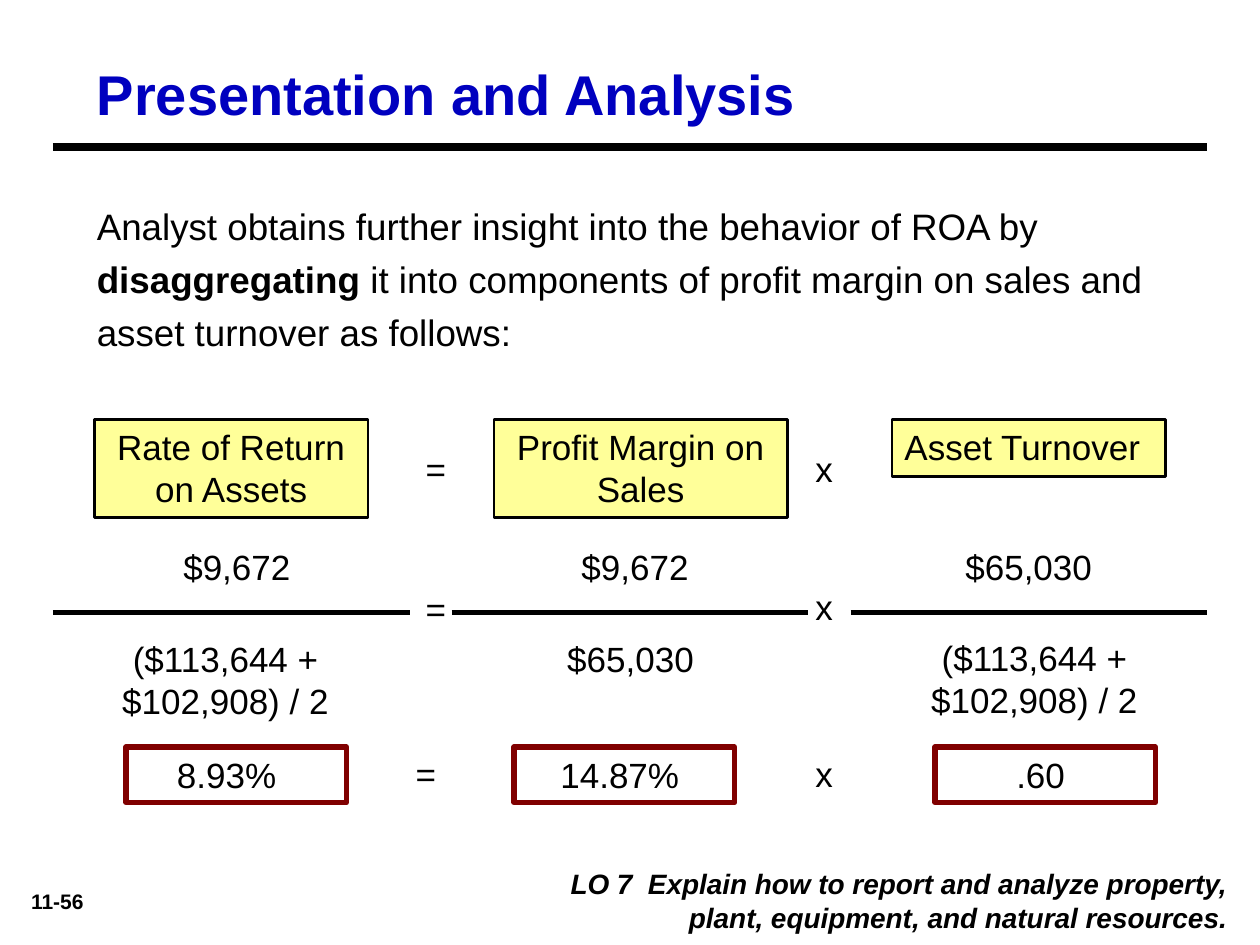
from lxml import etree
from pptx import Presentation
from pptx.dml.color import RGBColor
from pptx.enum.shapes import MSO_CONNECTOR, MSO_SHAPE
from pptx.enum.text import MSO_ANCHOR, PP_ALIGN
from pptx.oxml.ns import qn
from pptx.util import Inches, Pt

LEFT, CENTER, RIGHT = PP_ALIGN.LEFT, PP_ALIGN.CENTER, PP_ALIGN.RIGHT
TOP = MSO_ANCHOR.TOP
RECTANGLE = MSO_SHAPE.RECTANGLE
STRAIGHT = MSO_CONNECTOR.STRAIGHT

THEME = {
    "font": "Arial", "text": "000000", "title": "0000BF", "paper": "FFFFFF",
    "label": "FFFF99", "result": "800000",
    "title_size": 32, "body_size": 21, "formula_size": 20,
    "footer_size": 16, "number_size": 12,
}

# Content
TITLE = "Presentation and Analysis"
BODY = [
    ("Analyst obtains further insight into the behavior of ROA by ", False),
    ("disaggregating", True),
    (" it into components of profit margin on sales and asset turnover as follows:", False),
]
FOOTER = ("LO 7  Explain how to report and analyze property, "
          "plant, equipment, and natural resources.")
SLIDE_NUMBER = "11-56"
AVERAGE_ASSETS = "($113,644 + $102,908) / 2"

# Each ratio part: text, left, top, width, height (label and result add right inset)
RATIOS = [
    {"label": ("Rate of Return on Assets", 0.75, 3.33, 2.17, 0.78, 0.1),
     "numerator": ("$9,672", 0.92, 4.28, 1.92, 0.43),
     "denominator": (AVERAGE_ASSETS, 0.25, 5.01, 3.08, 0.77),
     "result": ("8.93%", 1, 5.93, 1.75, 0.44, 0.25)},
    {"label": ("Profit Margin on Sales", 3.92, 3.33, 2.33, 0.78, 0.1),
     "numerator": ("$9,672", 4.08, 4.28, 1.92, 0.43),
     "denominator": ("$65,030", 3.42, 5.01, 3.17, 0.43),
     "result": ("14.87%", 4.08, 5.93, 1.75, 0.44, 0.17)},
    {"label": ("Asset Turnover", 7.08, 3.33, 2.17, 0.45, 0.2),
     "numerator": ("$65,030", 6.75, 4.28, 2.83, 0.43),
     "denominator": (AVERAGE_ASSETS, 6.67, 5, 3.08, 0.77),
     "result": (".60", 7.42, 5.93, 1.75, 0.44, 0.17)},
]
# Operator: left and top in each of the three rows
OPERATORS = {
    "=": [(3.25, 3.5), (3.25, 4.61), (3.17, 5.92)],
    "x": [(6.33, 3.5), (6.33, 4.6), (6.33, 5.92)],
}
BAR_LEFT, BAR_STEP, BAR_WIDTH, BAR_TOP = 0.42, 3.165, 2.83, 4.86


def color(name):
    return RGBColor.from_string(THEME[name])


def add_text(slide, text, left, top, width, height, right_inset=0.1, *,
             size="formula_size", ink="text", bold=False, italic=False,
             align=CENTER, spacing=None, fill=None, line=None, line_width=1.5):
    """Add text, given as a string or (text, bold) runs, in a box or rectangle."""
    box = tuple(Inches(value) for value in (left, top, width, height))
    if fill:
        shape = slide.shapes.add_shape(RECTANGLE, *box)
        shape.shadow.inherit = False
        shape.fill.solid()
        shape.fill.fore_color.rgb = color(fill)
        if line:
            shape.line.color.rgb = color(line)
            shape.line.width = Pt(line_width)
        else:
            shape.line.fill.background()
    else:
        shape = slide.shapes.add_textbox(*box)
    frame = shape.text_frame
    frame.word_wrap = True
    frame.vertical_anchor = TOP
    frame.margin_left, frame.margin_right = Inches(0.1), Inches(right_inset)
    frame.margin_top = frame.margin_bottom = Inches(0.05)
    paragraph = frame.paragraphs[0]
    paragraph.alignment = align
    if spacing:
        paragraph.line_spacing = spacing
    for words, strong in [(text, bold)] if isinstance(text, str) else text:
        run = paragraph.add_run()
        run.text = words
        run.font.name = THEME["font"]
        run.font.size = Pt(THEME[size])
        run.font.color.rgb = color(ink)
        run.font.bold, run.font.italic = strong, italic


def add_rule(slide, left, right, top, width):
    rule = slide.shapes.add_connector(
        STRAIGHT, Inches(left), Inches(top), Inches(right), Inches(top))
    rule.line.color.rgb = color("text")
    rule.line.width = Pt(width)
    etree.SubElement(rule.element.spPr, qn("a:effectLst"))


def main():
    presentation = Presentation()
    presentation.slide_width, presentation.slide_height = Inches(10), Inches(7.5)
    slide = presentation.slides.add_slide(presentation.slide_layouts[6])

    # Heading and introduction
    add_text(slide, TITLE, 0.67, 0.42, 9, 0.61, size="title_size",
             ink="title", bold=True, align=LEFT)
    add_rule(slide, 0.42, 9.58, 1.17, 4.5)
    add_text(slide, BODY, 0.67, 1.5, 9.17, 1.5, 0.2, size="body_size",
             align=LEFT, spacing=1.2, fill="paper")

    # Ratio columns
    for column, ratio in enumerate(RATIOS):
        bar_left = BAR_LEFT + column * BAR_STEP
        add_text(slide, *ratio["label"], fill="label", line="text")
        add_text(slide, *ratio["numerator"])
        add_rule(slide, bar_left, bar_left + BAR_WIDTH, BAR_TOP, 3)
        add_text(slide, *ratio["denominator"])
        add_text(slide, *ratio["result"], fill="paper", line="result", line_width=3)

    # Operators between the columns
    for symbol, places in OPERATORS.items():
        for left, top in places:
            add_text(slide, symbol, left, top, 0.42, 0.43)

    # Footer
    add_text(slide, FOOTER, 3.92, 6.83, 5.92, 0.64, size="footer_size",
             bold=True, italic=True, align=RIGHT, fill="paper")
    add_text(slide, SLIDE_NUMBER, 0.08, 7, 0.75, 0.3, size="number_size", bold=True)

    presentation.save("out.pptx")


if __name__ == "__main__":
    main()
